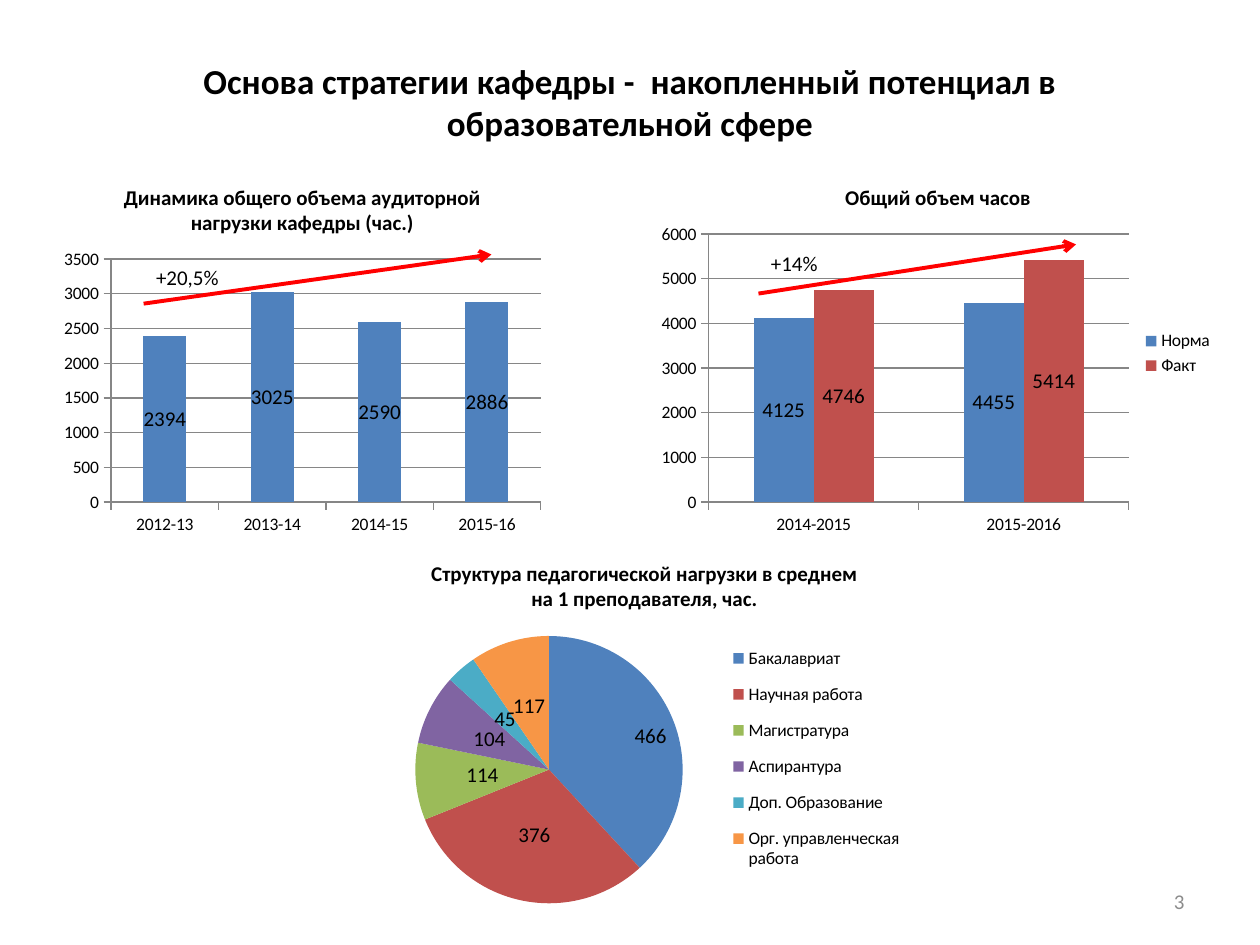
import pptx
import pptx.chart.data
import pptx.dml.color
import pptx.enum.chart
import pptx.enum.shapes
import pptx.enum.text
import pptx.oxml
import pptx.oxml.ns
import pptx.util

FACE = "Calibri"
BLUE, RED = "4F81BD", "C0504D"
SLICES = [BLUE, RED, "9BBB59", "8064A2", "4BACC6", "F79646"]
TOP, HIGH = 1.31, 2.99
KIND = pptx.enum.chart.XL_CHART_TYPE
SPOT = pptx.enum.chart.XL_LABEL_POSITION
ALIGN = pptx.enum.text.PP_ALIGN


def color(code):
    """Turn a hex string into a color."""
    return pptx.dml.color.RGBColor.from_string(code)


def box(*sizes):
    """Turn lengths in inches into slide units."""
    return [pptx.util.Inches(size) for size in sizes]


def style(font, size, bold=False, code="000000"):
    """Set face, size, weight and color of a font."""
    font.name, font.size, font.bold = FACE, pptx.util.Pt(size), bold
    font.color.rgb = color(code)


def fill(part, code):
    """Give a chart part a solid fill."""
    part.format.fill.solid()
    part.format.fill.fore_color.rgb = color(code)


def add_title(slide, text):
    """Place and format the slide title."""
    title = slide.shapes.title
    title.left, title.top, title.width, title.height = box(0.5, 0.3, 9, 1.01)
    title.text_frame.text = text
    title.text_frame.vertical_anchor = pptx.enum.text.MSO_ANCHOR.MIDDLE
    line = title.text_frame.paragraphs[0]
    line.alignment = ALIGN.CENTER
    style(line.font, 20, True)


def add_text(slide, text, place, align=ALIGN.LEFT, code="000000"):
    """Add a one-line text box."""
    frame = slide.shapes.add_textbox(*box(*place)).text_frame
    frame.word_wrap = True
    frame.vertical_anchor = pptx.enum.text.MSO_ANCHOR.MIDDLE
    frame.text = text
    line = frame.paragraphs[0]
    line.alignment = align
    style(line.font, 12, code=code)


def add_arrow(slide, start, end):
    """Add a red trend arrow."""
    shape = slide.shapes.add_connector(
        pptx.enum.shapes.MSO_CONNECTOR.STRAIGHT, *box(*start, *end))
    shape.line.color.rgb = color("FF0000")
    shape.line.width = pptx.util.Pt(2.25)
    props = shape.line._get_or_add_ln()
    tail = pptx.oxml.parse_xml(
        f'<a:tailEnd {pptx.oxml.ns.nsdecls("a")} type="arrow"/>')
    props.append(tail)
    props.addnext(pptx.oxml.parse_xml(
        f'<a:effectLst {pptx.oxml.ns.nsdecls("a")}/>'))


def add_chart(slide, kind, place, title, cats, rows):
    """Add a chart with a title and centered value labels."""
    data = pptx.chart.data.CategoryChartData()
    data.categories = cats
    for name, values in rows:
        data.add_series(name, values)
    chart = slide.shapes.add_chart(kind, *box(*place), data).chart
    style(chart.font, 18)
    chart.has_title = True
    chart.chart_title.text_frame.text = title
    style(chart.chart_title.text_frame.paragraphs[0].font, 12, True)
    chart.chart_title.include_in_layout = False
    plot = chart.plots[0]
    plot.has_data_labels = True
    labels = plot.data_labels
    labels.show_value, labels.show_percentage = True, False
    labels.position = SPOT.CENTER
    style(labels.font, 12)
    chart.has_legend = False
    return chart


def add_legend(chart):
    """Show a legend on the right."""
    chart.has_legend = True
    chart.legend.position = pptx.enum.chart.XL_LEGEND_POSITION.RIGHT
    chart.legend.include_in_layout = False
    style(chart.legend.font, 10)


def add_bars(slide, place, title, cats, rows):
    """Add a column chart with plain gray axes."""
    chart = add_chart(slide, KIND.COLUMN_CLUSTERED, place, title, cats, rows)
    plot = chart.plots[0]
    plot.gap_width, plot.overlap, plot.vary_by_categories = 150, 0, False
    for series, code in zip(plot.series, (BLUE, RED)):
        fill(series, code)
    for axis in (chart.category_axis, chart.value_axis):
        axis.major_tick_mark = pptx.enum.chart.XL_TICK_MARK.OUTSIDE
        axis.minor_tick_mark = pptx.enum.chart.XL_TICK_MARK.NONE
        axis.format.line.color.rgb = color("868686")
        style(axis.tick_labels.font, 10)
    chart.value_axis.has_major_gridlines = True
    chart.value_axis.major_gridlines.format.line.color.rgb = color("868686")
    return chart


def layout(shares, inner=""):
    """Build a manual layout from shares of the chart's size."""
    x, y, w, h = shares
    return pptx.oxml.parse_xml(
        f'<c:layout {pptx.oxml.ns.nsdecls("c")}><c:manualLayout>{inner}'
        f'<c:xMode val="edge"/><c:yMode val="edge"/><c:x val="{x}"/>'
        f'<c:y val="{y}"/><c:w val="{w}"/><c:h val="{h}"/>'
        '</c:manualLayout></c:layout>')


def add_pie(slide, place, title, cats, rows):
    """Add a pie chart with a tall legend."""
    chart = add_chart(slide, KIND.PIE, place, title, cats, rows)
    add_legend(chart)
    plot = chart.plots[0]
    plot.vary_by_categories = True
    points = plot.series[0].points
    for spot, code in enumerate(SLICES):
        fill(points[spot], code)
        label = points[spot].data_label
        label.position = SPOT.CENTER if spot else SPOT.INSIDE_END
        style(label.font, 12)
    area = chart._chartSpace.chart.plotArea
    for old in area.findall(pptx.oxml.ns.qn("c:layout")):
        area.remove(old)
    area.insert(0, layout((0.08, 0.25, 0.49, 0.71),
                          '<c:layoutTarget val="inner"/>'))
    legend = chart.legend._element
    for old in legend.findall(pptx.oxml.ns.qn("c:layout")):
        legend.remove(old)
    legend.find(pptx.oxml.ns.qn("c:legendPos")).addnext(
        layout((0.65, 0.24, 0.33, 0.67)))


def main():
    """Build the slide and save it."""
    deck = pptx.Presentation()
    deck.slide_width, deck.slide_height = box(10, 7.5)
    slide = deck.slides.add_slide(deck.slide_layouts[5])
    add_title(slide, "Основа стратегии кафедры -  накопленный потенциал в "
                     "образовательной сфере")
    add_bars(slide, (0.43, TOP, 3.94, HIGH),
             "Динамика общего объема аудиторной нагрузки кафедры (час.)",
             ["2012-13", "2013-14", "2014-15", "2015-16"],
             [("Series 1", (2394, 3025, 2590, 2886))])
    hours = add_bars(slide, (5.16, TOP, 4.57, HIGH), "Общий объем часов",
                     ["2014-2015", "2015-2016"],
                     [("Норма", (4125, 4455)), ("Факт", (4746, 5414))])
    add_legend(hours)
    add_arrow(slide, (1.14, 2.41), (3.9, 2.02))
    add_arrow(slide, (6.02, 2.33), (8.54, 1.94))
    add_text(slide, "+20,5%", (1.14, 2.05, 0.71, 0.3))
    add_text(slide, "+14%", (6.02, 1.94, 0.71, 0.3))
    add_pie(slide, (2.95, TOP + HIGH, 4.33, HIGH),
            "Структура педагогической нагрузки в среднем "
            "на 1 преподавателя, час.",
            ["Бакалавриат", "Научная работа", "Магистратура", "Аспирантура",
             "Доп. Образование", "Орг. управленческая работа"],
            [("Series 1", (466, 376, 114, 104, 45, 117))])
    add_text(slide, "3", (7.17, 6.95, 2.33, 0.4), ALIGN.RIGHT, "8C8C8C")
    deck.save("out.pptx")


if __name__ == "__main__":
    main()
